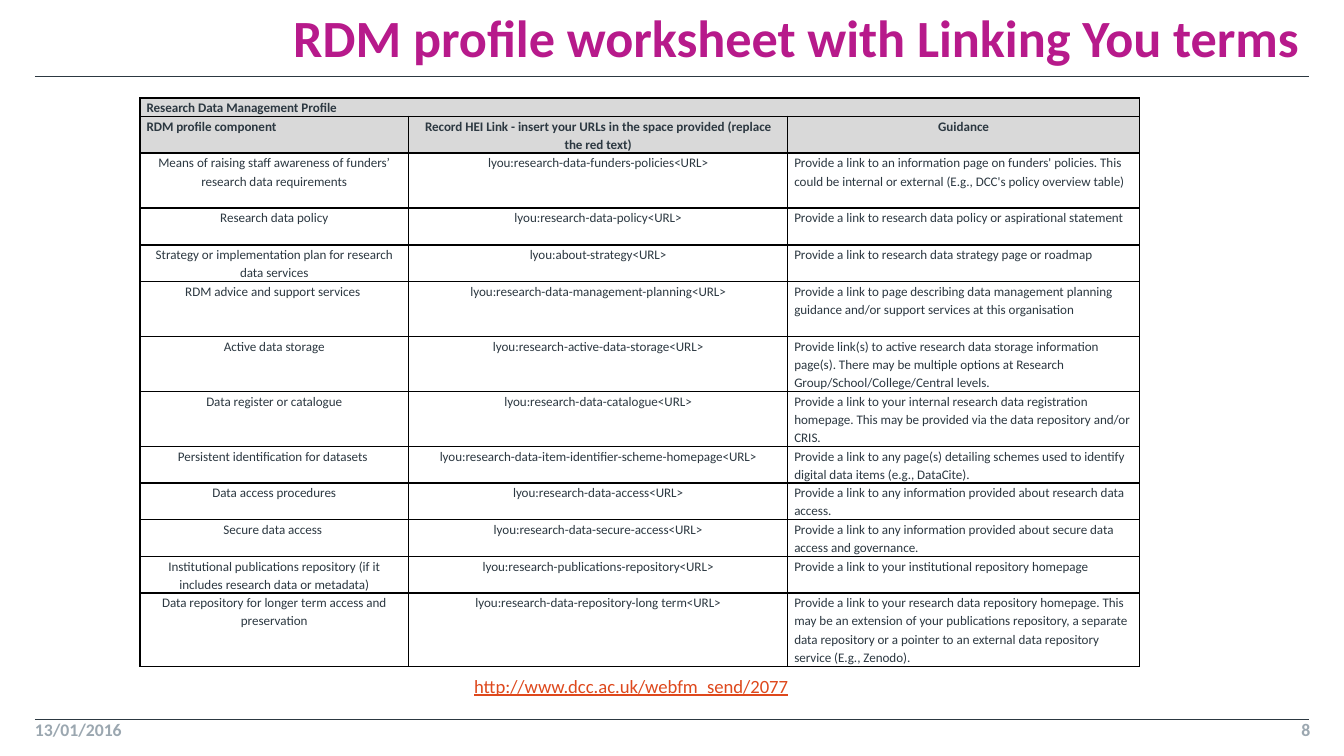
from lxml.etree import SubElement
from pptx import Presentation
from pptx.dml.color import RGBColor
from pptx.enum.shapes import MSO_CONNECTOR
from pptx.enum.text import MSO_ANCHOR, MSO_AUTO_SIZE, PP_ALIGN
from pptx.oxml import parse_xml
from pptx.oxml.ns import nsdecls, qn
from pptx.util import Inches, Pt

THEME = {
    "font": "Calibri",
    "ink": "2C3841",
    "title": "B71A8B",
    "footer": "9BA7B0",
    "link": "DE481C",
    "header_fill": "D9D9D9",
    "border": "000000",
    "title_size": 28,
    "footer_size": 9.5,
    "table_size": 7,
    "link_size": 10,
}

LEFT, CENTER, RIGHT = PP_ALIGN.LEFT, PP_ALIGN.CENTER, PP_ALIGN.RIGHT

TITLE = "RDM profile worksheet with Linking You terms "
LINK = "http://www.dcc.ac.uk/webfm_send/2077"
FOOTERS = [("13/01/2016", 0.26, LEFT), ("8", 8.96, RIGHT)]
RULES = [0.57, 5.35]

TABLE_BOX = (1.04, 0.73, 7.44, 4.23)
COLUMNS = [2, 2.82, 2.62]
HEADERS = [
    (1, ("Research Data Management Profile", "", "")),
    (2, ("RDM profile component",
         "Record HEI Link - insert your URLs in the space provided (replace the red text)",
         "Guidance")),
]
COMPONENTS = [
    (3, ("Means of raising staff awareness of funders’ research data requirements",
         "lyou:research-data-funders-policies<URL>",
         "Provide a link to an information page on funders' policies. This could be "
         "internal or external (E.g., DCC's policy overview table)")),
    (2, ("Research data policy",
         "lyou:research-data-policy<URL>",
         "Provide a link to research data policy or aspirational statement")),
    (2, ("Strategy or implementation plan for research data services",
         "lyou:about-strategy<URL>",
         "Provide a link to research data strategy page or roadmap")),
    (3, ("RDM advice and support services ",
         "lyou:research-data-management-planning<URL>",
         "Provide a link to page describing data management planning guidance "
         "and/or support services at this organisation")),
    (3, ("Active data storage",
         "lyou:research-active-data-storage<URL>",
         "Provide link(s) to active research data storage information page(s). There may be "
         "multiple options at Research Group/School/College/Central levels.")),
    (3, ("Data register or catalogue",
         "lyou:research-data-catalogue<URL>",
         "Provide a link to your internal research data registration homepage. This may be "
         "provided via the data repository and/or CRIS.")),
    (2, ("Persistent identification for datasets ",
         "lyou:research-data-item-identifier-scheme-homepage<URL>",
         "Provide a link to any page(s) detailing schemes used to identify digital data "
         "items (e.g., DataCite).")),
    (2, ("Data access procedures",
         "lyou:research-data-access<URL>",
         "Provide a link to any information provided about research data access.")),
    (2, ("Secure data access ",
         "lyou:research-data-secure-access<URL>",
         "Provide a link to any information provided about secure data access and governance.")),
    (2, ("Institutional publications repository (if it includes research data or metadata)",
         "lyou:research-publications-repository<URL>",
         "Provide a link to your institutional repository homepage")),
    (4, ("Data repository for longer term access and preservation",
         "lyou:research-data-repository-long term<URL>",
         "Provide a link to your research data repository homepage. This may be an extension "
         "of your publications repository, a separate data repository or a pointer to an "
         "external data repository service (E.g., Zenodo).")),
]


def rgb(name):
    return RGBColor.from_string(THEME[name])


def write(tf, text, size, color, align=LEFT, bold=False):
    p = tf.paragraphs[0]
    p.text = text
    p.alignment = align
    p.font.name = THEME["font"]
    p.font.size = Pt(THEME[size])
    p.font.color.rgb = rgb(color)
    p.font.bold = bold
    return p


def clear_margins(tf):
    tf.margin_left = tf.margin_right = tf.margin_top = tf.margin_bottom = 0


def add_rule(slide, y):
    line = slide.shapes.add_connector(
        MSO_CONNECTOR.STRAIGHT, Inches(0.26), Inches(y), Inches(9.74), Inches(y))
    line.line.color.rgb = rgb("ink")
    line.line.width = Pt(0.5)
    SubElement(line._element.spPr, qn("a:effectLst"))


def add_borders(cell):
    tcPr = cell._tc.get_or_add_tcPr()
    for i, side in enumerate(("lnL", "lnR", "lnT", "lnB")):
        tcPr.insert(i, parse_xml(
            f'<a:{side} {nsdecls("a")} w="{Pt(1)}"><a:solidFill>'
            f'<a:srgbClr val="{THEME["border"]}"/></a:solidFill></a:{side}>'))


def add_profile_table(slide):
    rows = HEADERS + COMPONENTS
    table = slide.shapes.add_table(
        len(rows), len(COLUMNS), *map(Inches, TABLE_BOX)).table
    table.first_row = table.horz_banding = False
    for column, width in zip(table.columns, COLUMNS):
        column.width = Inches(width)
    line_height = TABLE_BOX[3] / sum(lines for lines, _ in rows)
    for r, (lines, texts) in enumerate(rows):
        table.rows[r].height = Inches(lines * line_height)
        header = r < len(HEADERS)
        aligns = (LEFT, CENTER, CENTER) if header else (CENTER, CENTER, LEFT)
        for c, (text, align) in enumerate(zip(texts, aligns)):
            cell = table.cell(r, c)
            cell.margin_left = cell.margin_right = Inches(0.05)
            cell.margin_top = cell.margin_bottom = 0
            if header:
                cell.fill.solid()
                cell.fill.fore_color.rgb = rgb("header_fill")
            else:
                cell.fill.background()
            add_borders(cell)
            p = write(cell.text_frame, text, "table_size", "ink", align, header)
            p.line_spacing = 1.15
    table.cell(0, 0).merge(table.cell(0, len(COLUMNS) - 1))


prs = Presentation()
prs.slide_width = Inches(10)
prs.slide_height = prs.slide_width * 9 // 16
slide = prs.slides.add_slide(prs.slide_layouts[5])

for y in RULES:
    add_rule(slide, y)

title = slide.shapes.title
title.left, title.top, title.width, title.height = map(Inches, (1.54, 0, 8.21, 0.51))
tf = title.text_frame
clear_margins(tf)
tf.auto_size = MSO_AUTO_SIZE.NONE
tf.vertical_anchor = MSO_ANCHOR.BOTTOM
write(tf, TITLE, "title_size", "title", RIGHT, True)

for text, x, align in FOOTERS:
    tf = slide.shapes.add_textbox(*map(Inches, (x, 5.35, 0.79, 0.2))).text_frame
    clear_margins(tf)
    tf.word_wrap = True
    write(tf, text, "footer_size", "footer", align, True)

add_profile_table(slide)

tf = slide.shapes.add_textbox(*map(Inches, (3.43, 4.97, 2.56, 0.27))).text_frame
tf.word_wrap = False
tf.auto_size = MSO_AUTO_SIZE.SHAPE_TO_FIT_TEXT
write(tf, LINK, "link_size", "link").font.underline = True

prs.save("out.pptx")
